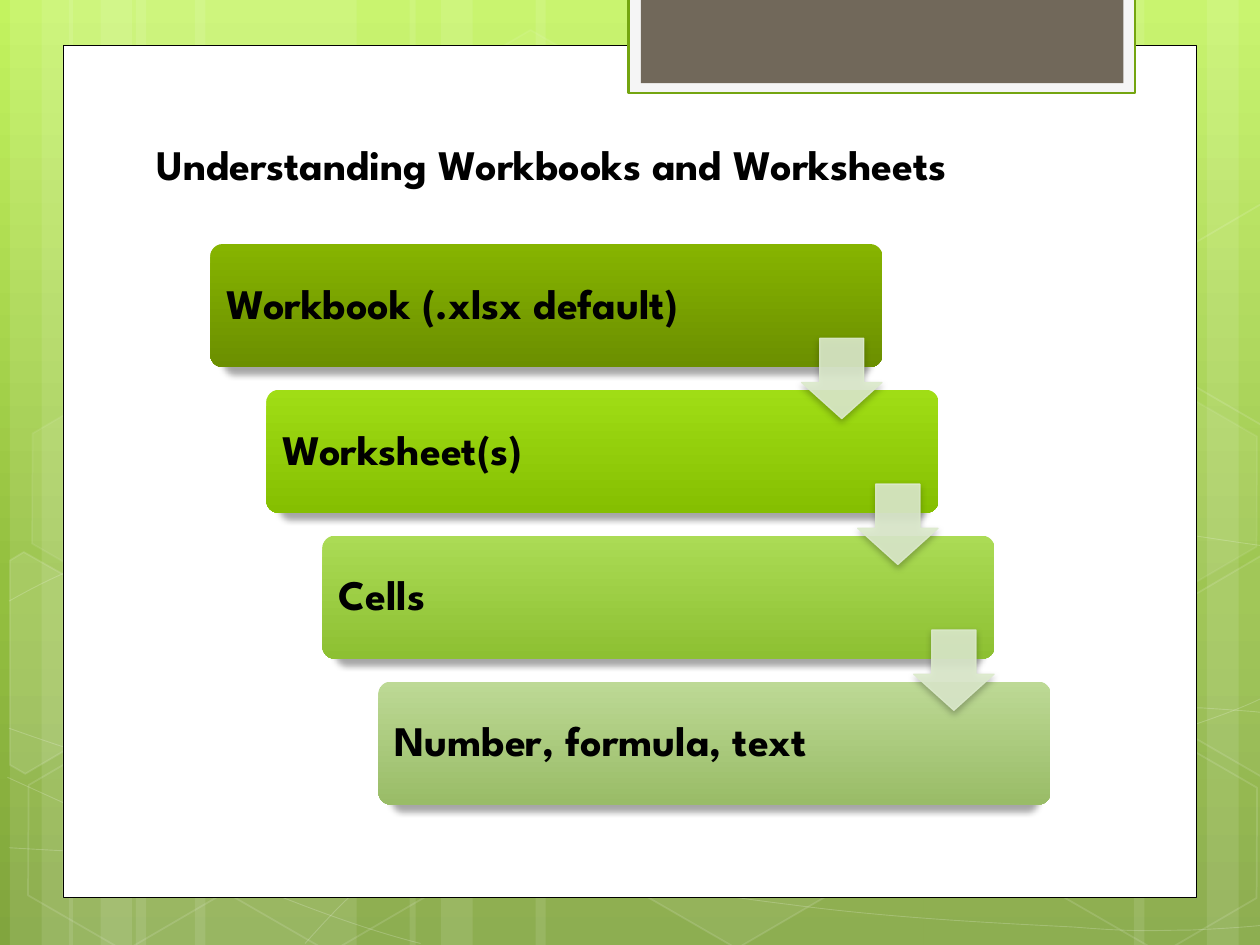
from typing import NamedTuple, Optional

from lxml import etree
from pptx import Presentation
from pptx.dml.color import RGBColor
from pptx.enum import shapes as kinds, text as txt
from pptx.oxml.ns import qn
from pptx.util import Cm, Pt

WHITE = RGBColor(0xFF, 0xFF, 0xFF)
BLACK = RGBColor(0, 0, 0)
TAB_RIM = RGBColor(0xF5, 0xF5, 0xF5)
TAB_LINE = RGBColor(0x74, 0xA5, 0x10)
TAB_CORE = RGBColor(0x71, 0x68, 0x5A)
ARROW = RGBColor(0xDC, 0xEA, 0xCC)
BACKDROP = ((0, RGBColor(0xC3, 0xF3, 0x5F)), (62, RGBColor(0x93, 0xBF, 0x3F)),
            (100, RGBColor(0x81, 0xA5, 0x3E)))
FONT = "League Spartan"
SHAPE = kinds.MSO_SHAPE


class Level(NamedTuple):
    label: str
    top: RGBColor
    bottom: RGBColor


class Hexagon(NamedTuple):
    left: float
    top: float
    fill_alpha: Optional[int]
    line_alpha: int


class Shadow(NamedTuple):
    alpha: int
    blur: float
    distance: float
    width: int


LEVELS = (
    Level("Workbook (.xlsx default)", RGBColor(0x86, 0xB4, 0x00), RGBColor(0x6B, 0x8F, 0x00)),
    Level("Worksheet(s)", RGBColor(0xA0, 0xDD, 0x15), RGBColor(0x85, 0xBF, 0x01)),
    Level("Cells", RGBColor(0xAB, 0xDB, 0x55), RGBColor(0x8D, 0xC0, 0x32)),
    Level("Number, formula, text", RGBColor(0xBD, 0xD9, 0x95), RGBColor(0x99, 0xBC, 0x67)),
)
LEVEL_SHADOW = Shadow(34, 3.5, 4, 96)
ARROW_SHADOW = Shadow(28, 4, 2, 100)

# Background decoration, in centimetres
LEFT_BANDS = ((2.74, 4.45), (0.2, 1.27), (0.84, 2.11))
OTHER_BANDS = ((18.62, 4.45), (24.33, 1.27), (22.86, 2.11),
               (10.8, 7.82), (8.26, 1.27), (8.89, 2.11))
BANDS = (LEFT_BANDS + tuple((left + 1.19, width) for left, width in LEFT_BANDS)
         + OTHER_BANDS)
# Start point, then two control points and an end point per cubic
CURVES = (
    ((0.18, 17.09), (1.55, 17.17), (2.92, 17.25), (4.83, 17.22), (6.73, 17.2),
     (9.09, 17.15), (11.63, 16.89), (14.17, 16.64), (17.78, 16.15), (20.12, 15.67),
     (22.43, 15.19), (24.82, 14.43), (25.58, 14)),
    ((0.18, 12.12), (0.91, 11.71), (1.65, 11.33), (3.07, 10.95), (4.52, 10.57),
     (6.58, 10.01), (8.81, 9.83), (11.07, 9.65), (13.82, 9.63), (16.61, 9.83),
     (19.41, 10.03), (24.05, 10.82), (25.58, 11.02)),
    ((0.15, 15.67), (3.23, 17.07), (6.27, 18.47), (8.48, 19.02)),
    ((0.18, 14.68), (0.97, 14.96), (1.78, 15.24), (3.25, 15.65), (4.72, 16.03),
     (6.93, 16.66), (9.07, 17.09), (11.18, 17.53), (13.84, 17.98), (15.95, 18.24),
     (18.06, 18.52), (20.32, 18.62), (21.67, 18.69), (22.99, 18.8), (23.34, 18.75),
     (24, 18.75), (24.66, 18.72), (25.12, 18.69), (25.58, 18.64)),
    ((6.15, 19.02), (6.6, 18.52), (7.06, 18.01), (7.67, 17.55), (8.28, 17.09),
     (9.14, 16.59), (9.86, 16.23), (10.57, 15.88), (11, 15.72), (11.94, 15.47),
     (12.85, 15.21), (14.55, 14.86), (15.44, 14.68), (16.36, 14.5), (16.48, 14.5),
     (17.27, 14.45), (18.06, 14.38), (19.3, 14.3), (20.17, 14.27), (21.06, 14.25),
     (22.5, 14.27), (22.5, 14.27), (23.07, 14.27), (23.64, 14.27), (24.21, 14.27),
     (24.66, 14.3), (25.1, 14.33), (25.32, 14.35), (25.55, 14.38), (25.48, 14.35),
     (25.55, 14.38)),
)
HEXAGONS = (
    Hexagon(8.48, 0.91, 4, 8), Hexagon(12.62, 14.96, 6, 12),
    Hexagon(0.28, 15.01, None, 12), Hexagon(0.36, 7.92, 7, 8),
    Hexagon(4.42, 15.04, None, 12), Hexagon(19.13, 11.51, 10, 12),
    Hexagon(21.18, 15.06, None, 12), Hexagon(21.18, 7.98, 7, 8),
)
LEFT_CUT = ((0.2, 11.3), (0.48, 11.13), (2.44, 12.24), (2.41, 14.48),
            (0.51, 15.6), (0.2, 15.42))
RIGHT_CUT = ((23.52, 12.32), (25.43, 11.2), (25.63, 11.33), (25.63, 15.57),
             (25.45, 15.67), (23.52, 14.55))
UPPER_RIGHT_CUT = tuple((x, y - 7.09) for x, y in RIGHT_CUT)


def add_alpha(parent, percent: int) -> None:
    for color in parent.iter(qn("a:srgbClr")):
        etree.SubElement(color, qn("a:alpha")).set("val", str(percent * 1000))


def style(shape, fill=None, fill_alpha=100, line=None, weight=1.0, line_alpha=100) -> None:
    shape.shadow.inherit = False
    if fill is None:
        shape.fill.background()
    else:
        shape.fill.solid()
        shape.fill.fore_color.rgb = fill
        add_alpha(shape._element.spPr.find(qn("a:solidFill")), fill_alpha)
    if line is None:
        shape.line.fill.background()
    else:
        shape.line.color.rgb = line
        shape.line.width = Pt(weight)
        add_alpha(shape._element.spPr.find(qn("a:ln")), line_alpha)


def add_box(slide, kind, left: float, top: float, width: float, height: float, **look):
    box = slide.shapes.add_shape(kind, Cm(left), Cm(top), Cm(width), Cm(height))
    style(box, **look)
    return box


def add_outline(slide, points, closed: bool = True, **look):
    # The builder rounds to whole units, so lengths go in as EMU
    corners = [(Cm(x), Cm(y)) for x, y in points]
    builder = slide.shapes.build_freeform(*corners[0])
    builder.add_line_segments(corners[1:], close=closed)
    outline = builder.convert_to_shape()
    style(outline, line=WHITE, **look)
    return outline


def add_curve(slide, knots) -> None:
    curve = add_outline(slide, knots, False, weight=0.5, line_alpha=20)
    segments = list(curve._element.iter(qn("a:lnTo")))
    for i in range(0, len(segments), 3):
        cubic = etree.Element(qn("a:cubicBezTo"))
        segments[i].addprevious(cubic)
        for segment in segments[i:i + 3]:
            cubic.append(segment[0])
            segment.getparent().remove(segment)


def set_gradient(fill, element, stops) -> None:
    fill.gradient()
    fill.gradient_angle = 270
    stop_list = element.find(".//" + qn("a:gsLst"))
    for old in list(stop_list):
        stop_list.remove(old)
    for position, color in stops:
        stop = etree.SubElement(stop_list, qn("a:gs"), pos=str(position * 1000))
        etree.SubElement(stop, qn("a:srgbClr"), val=str(color))


def add_shadow(shape, shadow: Shadow) -> None:
    effects = shape._element.spPr.find(qn("a:effectLst"))
    outer = etree.SubElement(effects, qn("a:outerShdw"), blurRad=str(Pt(shadow.blur)),
                             dist=str(Pt(shadow.distance)), dir="5400000",
                             sx=str(shadow.width * 1000), algn="ctr", rotWithShape="0")
    etree.SubElement(outer, qn("a:srgbClr"), val=str(BLACK))
    add_alpha(outer, shadow.alpha)


def write(frame, words: str, anchor) -> None:
    frame.text = words
    frame.word_wrap = True
    frame.vertical_anchor = anchor
    paragraph = frame.paragraphs[0]
    paragraph.alignment = txt.PP_ALIGN.LEFT
    font = paragraph.runs[0].font
    font.name, font.size, font.bold = FONT, Pt(24), True
    font.color.rgb = BLACK


def draw_background(slide) -> None:
    set_gradient(slide.background.fill, slide._element, BACKDROP)
    for left, width in BANDS:
        add_box(slide, SHAPE.RECTANGLE, left, 0, width, 19.05, fill=WHITE, fill_alpha=10)
    for knots in CURVES:
        add_curve(slide, knots)
    for cell in HEXAGONS:
        hexagon = add_box(slide, SHAPE.HEXAGON, cell.left, cell.top, 4.45, 3.86,
                          fill=WHITE if cell.fill_alpha else None,
                          fill_alpha=cell.fill_alpha, line=WHITE, line_alpha=cell.line_alpha)
        hexagon.adjustments[0], hexagon.adjustments[1] = 0.285, 1.155
        hexagon.rotation = 30
    add_outline(slide, LEFT_CUT, fill=WHITE, fill_alpha=10, line_alpha=12)
    add_outline(slide, RIGHT_CUT, fill=WHITE, fill_alpha=4, line_alpha=12)
    add_outline(slide, UPPER_RIGHT_CUT, line_alpha=12)
    # White page and the tab at its top
    add_box(slide, SHAPE.RECTANGLE, 1.27, 0.91, 22.86, 17.19, fill=WHITE, line=BLACK, weight=0.5)
    add_box(slide, SHAPE.RECTANGLE, 12.67, -0.05, 10.21, 1.93, fill=TAB_RIM,
            line=TAB_LINE, weight=1.25)
    add_box(slide, SHAPE.RECTANGLE, 12.92, -0.05, 9.73, 1.73, fill=TAB_CORE)


def draw_title(slide) -> None:
    title = slide.shapes.title
    title.left, title.top, title.width, title.height = Cm(2.9), Cm(2.33), Cm(20.8), Cm(1.6)
    write(title.text_frame, "Understanding Workbooks and Worksheets", txt.MSO_ANCHOR.BOTTOM)
    slide.shapes._spTree.append(title._element)  # in front of the page


def draw_steps(slide) -> None:
    corners = [(4.24 + 1.13 * i, 4.92 + 2.94 * i) for i in range(len(LEVELS))]
    for (left, top), level in zip(corners, LEVELS):
        bar = add_box(slide, SHAPE.ROUNDED_RECTANGLE, left, top, 13.55, 2.48)
        bar.adjustments[0] = 0.1
        set_gradient(bar.fill, bar._element, ((0, level.top), (100, level.bottom)))
        add_shadow(bar, LEVEL_SHADOW)
        write(bar.text_frame, level.label, txt.MSO_ANCHOR.MIDDLE)
        bar.text_frame.margin_left = Cm(0.25)
        bar.text_frame.paragraphs[0].line_spacing = 0.9
    for left, top in corners[:-1]:
        arrow = add_box(slide, SHAPE.DOWN_ARROW, left + 11.92, top + 1.9, 1.62, 1.62, fill=ARROW,
                        fill_alpha=90, line=ARROW, weight=0.75, line_alpha=90)
        arrow.adjustments[0], arrow.adjustments[1] = 0.55, 0.45
        add_shadow(arrow, ARROW_SHADOW)


def main() -> None:
    deck = Presentation()
    deck.slide_width, deck.slide_height = Cm(25.4), Cm(19.05)
    slide = deck.slides.add_slide(deck.slide_layouts[5])
    draw_background(slide)
    draw_title(slide)
    draw_steps(slide)
    deck.save("out.pptx")


if __name__ == "__main__":
    main()
